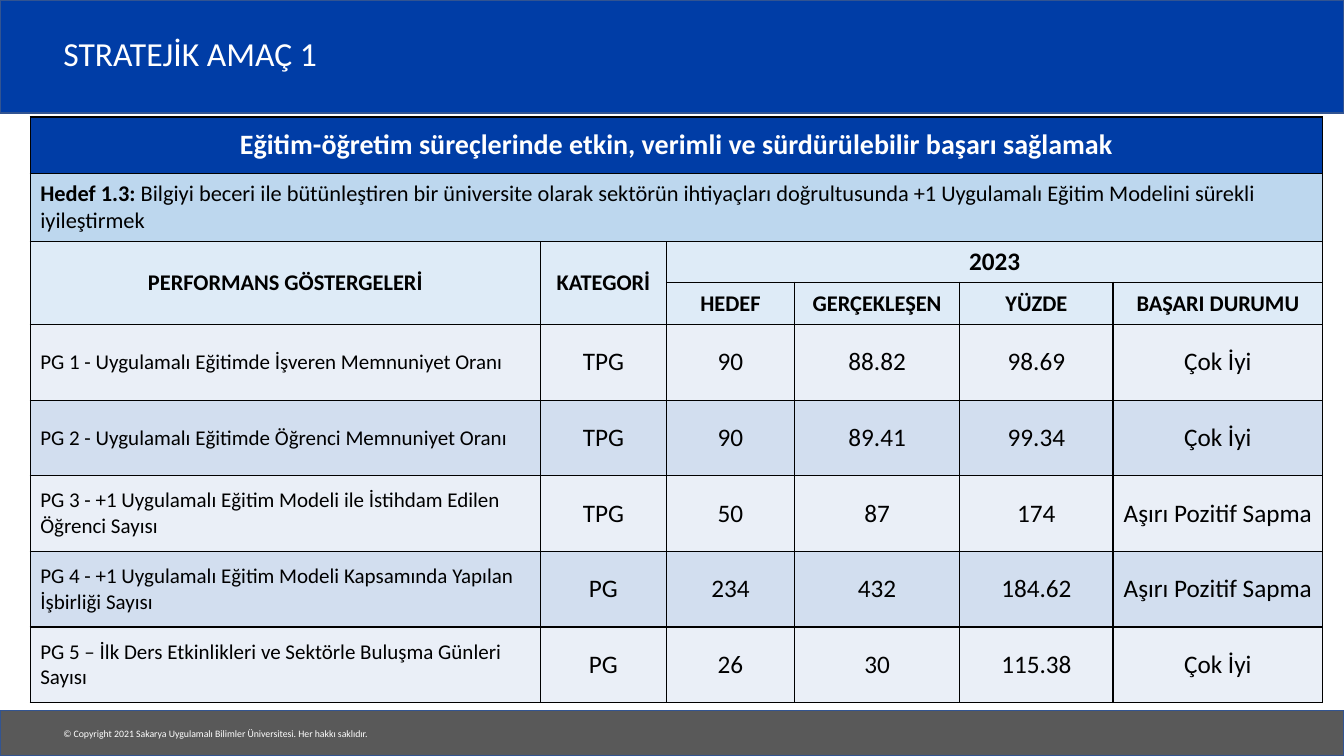
"""Build the strategic goal 1 performance table slide."""
from lxml.etree import SubElement
from pptx import Presentation
from pptx.dml.color import RGBColor
from pptx.enum.shapes import MSO_SHAPE
from pptx.enum.text import MSO_ANCHOR as ANCHOR, PP_ALIGN as ALIGN
from pptx.oxml.ns import qn
from pptx.util import Inches, Pt

WHITE = RGBColor(0xFF, 0xFF, 0xFF)
BLACK = RGBColor(0, 0, 0)
BLUE = RGBColor(0x00, 0x3D, 0xA6)
GRAY = RGBColor(0x59, 0x59, 0x59)
EDGE = RGBColor(0x32, 0x54, 0x91)
SKY = RGBColor(0xBD, 0xD7, 0xEE)
PALE = RGBColor(0xDE, 0xEB, 0xF7)
BANDS = (RGBColor(0xEA, 0xEF, 0xF7), RGBColor(0xD2, 0xDE, 0xEF))

TITLE = "STRATEJİK AMAÇ 1"
COPYRIGHT = "© Copyright 2021 Sakarya Uygulamalı Bilimler Üniversitesi. Her hakkı saklıdır."
GOAL = "Eğitim-öğretim süreçlerinde etkin, verimli ve sürdürülebilir başarı sağlamak"
TARGET_LABEL = "Hedef 1.3: "
TARGET = ("Bilgiyi beceri ile bütünleştiren bir üniversite olarak sektörün ihtiyaçları "
          "doğrultusunda +1 Uygulamalı Eğitim Modelini sürekli iyileştirmek")
YEAR = "2023"
ROW_HEADS = ["PERFORMANS GÖSTERGELERİ", "KATEGORİ"]
YEAR_HEADS = ["HEDEF", "GERÇEKLEŞEN", "YÜZDE", "BAŞARI DURUMU"]
INDICATORS = [
    ("PG 1 - Uygulamalı Eğitimde İşveren Memnuniyet Oranı",
     "TPG", "90", "88.82", "98.69", "Çok İyi"),
    ("PG 2 - Uygulamalı Eğitimde Öğrenci Memnuniyet Oranı",
     "TPG", "90", "89.41", "99.34", "Çok İyi"),
    ("PG 3 - +1 Uygulamalı Eğitim Modeli ile İstihdam Edilen Öğrenci Sayısı",
     "TPG", "50", "87", "174", "Aşırı Pozitif Sapma"),
    ("PG 4 - +1 Uygulamalı Eğitim Modeli Kapsamında Yapılan İşbirliği Sayısı",
     "PG", "234", "432", "184.62", "Aşırı Pozitif Sapma"),
    ("PG 5 – İlk Ders Etkinlikleri ve Sektörle Buluşma Günleri Sayısı",
     "PG", "26", "30", "115.38", "Çok İyi"),
]
BARS = [(0, 1.12, BLUE), (7.05, 0.45, GRAY)]
LABELS = [
    (TITLE, (0.53, 0.19, 11.03, 0.73), 24, True, 0.9),
    (COPYRIGHT, (0.53, 7.17, 3.29, 0.22), 7, False, 1.0),
]
COLS = [5.06, 1.25, 1.27, 1.64, 1.52, 2.08]
ROWS = [0.56, 0.68, 0.4, 0.42] + [0.75] * len(INDICATORS)
MERGES = [(0, 0, 0, 5), (1, 0, 1, 5), (2, 0, 3, 0), (2, 1, 3, 1), (2, 2, 2, 5)]
FIRST_DATA_ROW = 4


def add_run(p, text, size, color=BLACK, bold=False):
    r = p.add_run()
    r.text = text
    r.font.color.rgb = color
    for name, value in {"name": "Calibri", "size": Pt(size), "bold": bold}.items():
        setattr(r.font, name, value)


def add_borders(cell):
    tc_pr = cell._tc.get_or_add_tcPr()
    for side in ("a:lnL", "a:lnR", "a:lnT", "a:lnB"):
        ln = SubElement(tc_pr, qn(side), w=str(Pt(1)))
        SubElement(SubElement(ln, qn("a:solidFill")), qn("a:srgbClr"), val=str(BLACK))


def fill_cell(cell, runs, align=ALIGN.CENTER, margin=0.1):
    cell.vertical_anchor = ANCHOR.MIDDLE
    cell.margin_left = cell.margin_right = Inches(margin)
    p = cell.text_frame.paragraphs[0]
    p.alignment = align
    for run in runs:
        add_run(p, *run)


def row_color(row):
    if row < FIRST_DATA_ROW:
        return (BLUE, SKY, PALE, PALE)[row]
    return BANDS[(row - FIRST_DATA_ROW) % 2]


def add_indicator_table(s):
    frame = s.shapes.add_table(len(ROWS), len(COLS), Inches(0.3), Inches(1.16),
                               Inches(sum(COLS)), Inches(sum(ROWS)))
    table = frame.table
    table.first_row = table.horz_banding = False
    for col, width in zip(table.columns, COLS):
        col.width = Inches(width)
    for i, height in enumerate(ROWS):
        table.rows[i].height = Inches(height)
        for cell in table.rows[i].cells:
            add_borders(cell)
            cell.fill.solid()
            cell.fill.fore_color.rgb = row_color(i)
    for top, left, bottom, right in MERGES:
        table.cell(top, left).merge(table.cell(bottom, right))

    fill_cell(table.cell(0, 0), [(GOAL, 20, WHITE, True)])
    fill_cell(table.cell(1, 0), [(TARGET_LABEL, 16, BLACK, True), (TARGET, 16)], ALIGN.LEFT)
    fill_cell(table.cell(2, 2), [(YEAR, 18, BLACK, True)])
    for row, first, heads in ((2, 0, ROW_HEADS), (3, 2, YEAR_HEADS)):
        for j, head in enumerate(heads, first):
            fill_cell(table.cell(row, j), [(head, 16, BLACK, True)])
    for i, (indicator, *values) in enumerate(INDICATORS, FIRST_DATA_ROW):
        fill_cell(table.cell(i, 0), [(indicator, 15)], ALIGN.LEFT)
        for j, value in enumerate(values, 1):
            fill_cell(table.cell(i, j), [(value, 18)], margin=0.01)


def main():
    prs = Presentation()
    prs.slide_width, prs.slide_height = Inches(13.33), Inches(7.5)
    s = prs.slides.add_slide(prs.slide_layouts[6])
    for top, height, color in BARS:
        sp = s.shapes.add_shape(MSO_SHAPE.RECTANGLE, 0, Inches(top),
                                prs.slide_width, Inches(height))
        sp.shadow.inherit = False
        sp.fill.solid()
        sp.fill.fore_color.rgb = color
        sp.line.color.rgb = EDGE
        sp.line.width = Pt(1)
    for text, box, size, wrap, spacing in LABELS:
        tf = s.shapes.add_textbox(*map(Inches, box)).text_frame
        tf.word_wrap = wrap
        tf.vertical_anchor = ANCHOR.MIDDLE
        p = tf.paragraphs[0]
        p.line_spacing = spacing
        add_run(p, text, size, WHITE)
    add_indicator_table(s)
    prs.save("out.pptx")


if __name__ == "__main__":
    main()
